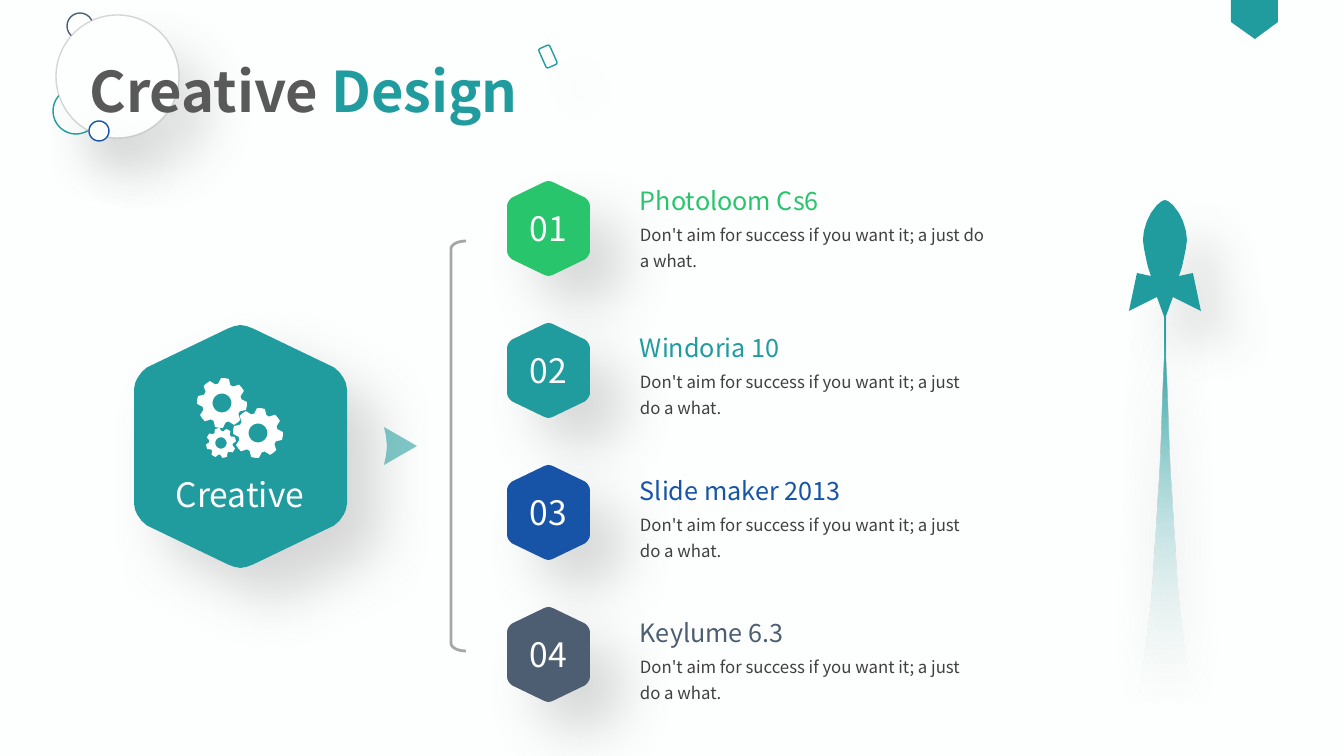
from math import cos, radians, sin

from lxml import etree
from pptx import Presentation
from pptx.dml.color import RGBColor
from pptx.enum.shapes import MSO_SHAPE
from pptx.enum.text import MSO_ANCHOR, MSO_AUTO_SIZE, PP_ALIGN
from pptx.oxml.ns import qn
from pptx.util import Pt

OVAL, RECT = MSO_SHAPE.OVAL, MSO_SHAPE.RECTANGLE
ROUND_RECT, BRACKET = MSO_SHAPE.ROUNDED_RECTANGLE, MSO_SHAPE.LEFT_BRACKET
LEFT, CENTER = PP_ALIGN.LEFT, PP_ALIGN.CENTER
TOP, MIDDLE = MSO_ANCHOR.TOP, MSO_ANCHOR.MIDDLE
GROW = MSO_AUTO_SIZE.SHAPE_TO_FIT_TEXT

WIDTH, HEIGHT = 1344, 756
PX = 12192000 / WIDTH
FONT = "Noto Sans CJK SC"
COLORS = {
    "paper": "FDFFFE", "white": "FFFFFF", "teal": "209C9F", "green": "29C56D",
    "blue": "1754A8", "slate": "4D5E72", "gray": "A6A6A6", "title": "595959",
    "body": "404040", "shadow": "808080",
}
# Shadows: opacity %, blur pt, distance pt
SOFT, DEEP, ROCKET, FLAME = (21, 33, 33), (31, 39, 32), (22, 33, 35), (40, 33, 2)

# Upper right quarter of a rounded hexagon, in half widths and half heights
HEX_QUARTER = [(0, -1), (.06, -.99), (.12, -.97), (.88, -.65), (.93, -.61),
               (.97, -.56), (.99, -.52), (1, -.47)]
# Right halves, as px from the tip of the rocket and of the flame
ROCKET_HALF = [(0, 0), (3, 1), (8, 5), (14, 13), (18, 21), (21, 31), (22, 40),
               (21, 48), (19, 58), (17, 67), (14, 76), (28, 73), (36, 111),
               (8, 97), (0, 119)]
FLAME_HALF = [(1, 0), (1, 41), (3, 92), (5, 148), (9, 214), (13, 278),
              (19, 332), (25, 376), (28, 389)]
DESCRIPTION = "Don't aim for success if you want it; a just do a what."


def rgb(name):
    return RGBColor.from_string(COLORS[name])


def mirrored(half, x, y):
    """Closes a right half around the vertical axis at x."""
    left = [(-dx, dy) for dx, dy in reversed(half)]
    return [(x + dx, y + dy) for dx, dy in half + left]


def polar(x, y, r, degrees):
    return x + r * cos(radians(degrees)), y + r * sin(radians(degrees))


class Deck:
    def __init__(self):
        self.prs = Presentation()
        self.prs.slide_width, self.prs.slide_height = self.emu(WIDTH, HEIGHT)
        self.s = self.prs.slides.add_slide(self.prs.slide_layouts[6])
        fill = self.s.background.fill
        fill.solid()
        fill.fore_color.rgb = rgb("paper")

    def emu(self, *lengths):
        return [round(v * PX) for v in lengths]

    def alpha(self, parent, percent):
        color = next(parent.iter(qn("a:srgbClr")))
        etree.SubElement(color, qn("a:alpha"), val=str(percent * 1000))

    def style(self, sp, fill=None, line=None, width=1, shadow=None):
        if fill:
            sp.fill.solid()
            sp.fill.fore_color.rgb = rgb(fill)
        else:
            sp.fill.background()
        if line:
            sp.line.color.rgb = rgb(line)
            sp.line.width = Pt(width)
        else:
            sp.line.fill.background()
        sp.shadow.inherit = False
        if shadow:
            opacity, blur, dist = shadow
            effects = sp.element.spPr.find(qn("a:effectLst"))
            outer = etree.SubElement(
                effects, qn("a:outerShdw"), blurRad=str(Pt(blur)),
                dist=str(Pt(dist)), dir=str(45 * 60000), algn="tl", rotWithShape="0")
            etree.SubElement(outer, qn("a:srgbClr"), val=COLORS["shadow"])
            self.alpha(outer, opacity)
        return sp

    def shape(self, kind, x, y, w, h, **style):
        sp = self.s.shapes.add_shape(kind, *self.emu(x, y, w, h))
        return self.style(sp, **style)

    def outline(self, contours, **style):
        first, *holes = [[self.emu(*pt) for pt in c] for c in contours]
        fb = self.s.shapes.build_freeform(*first[0], scale=1.0)
        fb.add_line_segments(first[1:], close=True)
        for hole in holes:
            fb.move_to(*hole[0])
            fb.add_line_segments(hole[1:], close=True)
        return self.style(fb.convert_to_shape(), **style)

    def hexagon(self, x, y, w, h, fill):
        half = HEX_QUARTER + [(dx, -dy) for dx, dy in reversed(HEX_QUARTER)]
        half = [(dx * w / 2, dy * h / 2) for dx, dy in half]
        points = mirrored(half, x + w / 2, y + h / 2)
        return self.outline([points], fill=fill, shadow=DEEP)

    def gear(self, x, y, r, phase):
        teeth = [polar(x, y, r * k, phase + 45 * i + a) for i in range(8)
                 for a, k in ((-18, .79), (-9, 1), (0, 1), (9, 1), (18, .79))]
        hole = [polar(x, y, r * .38, -15 * i) for i in range(24)]
        return self.outline([teeth, hole], fill="white")

    def label(self, sp, runs, size, align=LEFT, anchor=MIDDLE, spacing=None, bold=False):
        tf = sp.text_frame
        tf.vertical_anchor = anchor
        p = tf.paragraphs[0]
        p.alignment = align
        if spacing:
            p.line_spacing = spacing
        for text, color in runs:
            r = p.add_run()
            r.text = text
            r.font.name, r.font.size, r.font.bold = FONT, Pt(size), bold
            r.font.color.rgb = rgb(color)

    def text(self, x, y, w, h, runs, size, wrap=True, **options):
        sp = self.s.shapes.add_textbox(*self.emu(x, y, w, h))
        sp.text_frame.word_wrap = wrap
        sp.text_frame.auto_size = GROW
        self.label(sp, runs, size, **options)


def main():
    d = Deck()

    # Corner ribbon
    d.outline([[(1231, 0), (1278, 0), (1278, 22), (1255, 39), (1231, 22)]], fill="teal")

    # Title with bubbles
    for x, y, size, line in ((53, 88, 46, "teal"), (67, 13, 26, "slate"),
                             (56, 15, 123, "gray"), (89, 121, 20, "blue")):
        sp = d.shape(OVAL, x, y, size, size, fill="paper", line=line, shadow=SOFT)
        if line == "gray":
            d.alpha(sp.element.spPr.find(qn("a:ln")), 45)
    d.text(28, 52, 551, 78, [("Creative", "title"), (" Design", "teal")], 40,
           align=CENTER, anchor=TOP, bold=True)
    d.shape(ROUND_RECT, 542, 46, 12, 21, line="teal", shadow=SOFT).rotation = 336.1

    # Main hexagon, bracket and arrow
    d.hexagon(134, 325, 213, 243, "teal")
    d.shape(BRACKET, 451, 241, 15, 410, line="gray", width=2).adjustments[0] = .52
    arrow = d.outline([[(417, 446), (384, 465), (386, 456), (387, 446),
                        (386, 436), (384, 427)]], fill="teal")
    d.alpha(arrow.element.spPr, 56)
    for x, y, r, phase in ((222, 403, 25, 7), (258, 433, 25, 7), (221, 443, 15, -15)):
        d.gear(x, y, r, phase)
    d.text(159, 469, 162, 50, [("Creative", "white")], 24, wrap=False,
           align=CENTER, anchor=TOP)

    # Numbered items: name, colour, name top and height, description top and width
    items = [("Photoloom Cs6", "green", 174, 46, 213, 371),
             ("Windoria 10", "teal", 321, 46, 360, 364),
             ("Slide maker 2013", "blue", 466, 43, 503, 353),
             ("Keylume 6.3", "slate", 608, 43, 645, 353)]
    for i, (name, color, name_y, name_h, desc_y, desc_w) in enumerate(items):
        badge = d.hexagon(507, 181 + 142 * i, 83, 95, color)
        d.label(badge, [(f"{i + 1:02}", "white")], 24, align=CENTER)
        d.text(630, desc_y, desc_w, 63, [(DESCRIPTION, "body")], 12, spacing=1.3)
        d.text(630, name_y, 236, name_h, [(name, color)], 18, spacing=1.2)

    # Rocket and fading flame
    d.outline([mirrored(ROCKET_HALF, 1165, 200)], fill="teal", shadow=ROCKET)
    flame = d.outline([mirrored(FLAME_HALF, 1165, 318)], shadow=FLAME)
    flame.fill.gradient()
    flame.fill.gradient_angle = 90
    for stop, position, color in zip(flame.fill.gradient_stops, (0, .95), ("white", "teal")):
        stop.position = position
        stop.color.rgb = rgb(color)
    d.alpha(flame.element.spPr.find(qn("a:gradFill")), 0)
    d.shape(RECT, 1084, 703, 155, 53, fill="paper")

    d.prs.save("out.pptx")


if __name__ == "__main__":
    main()
